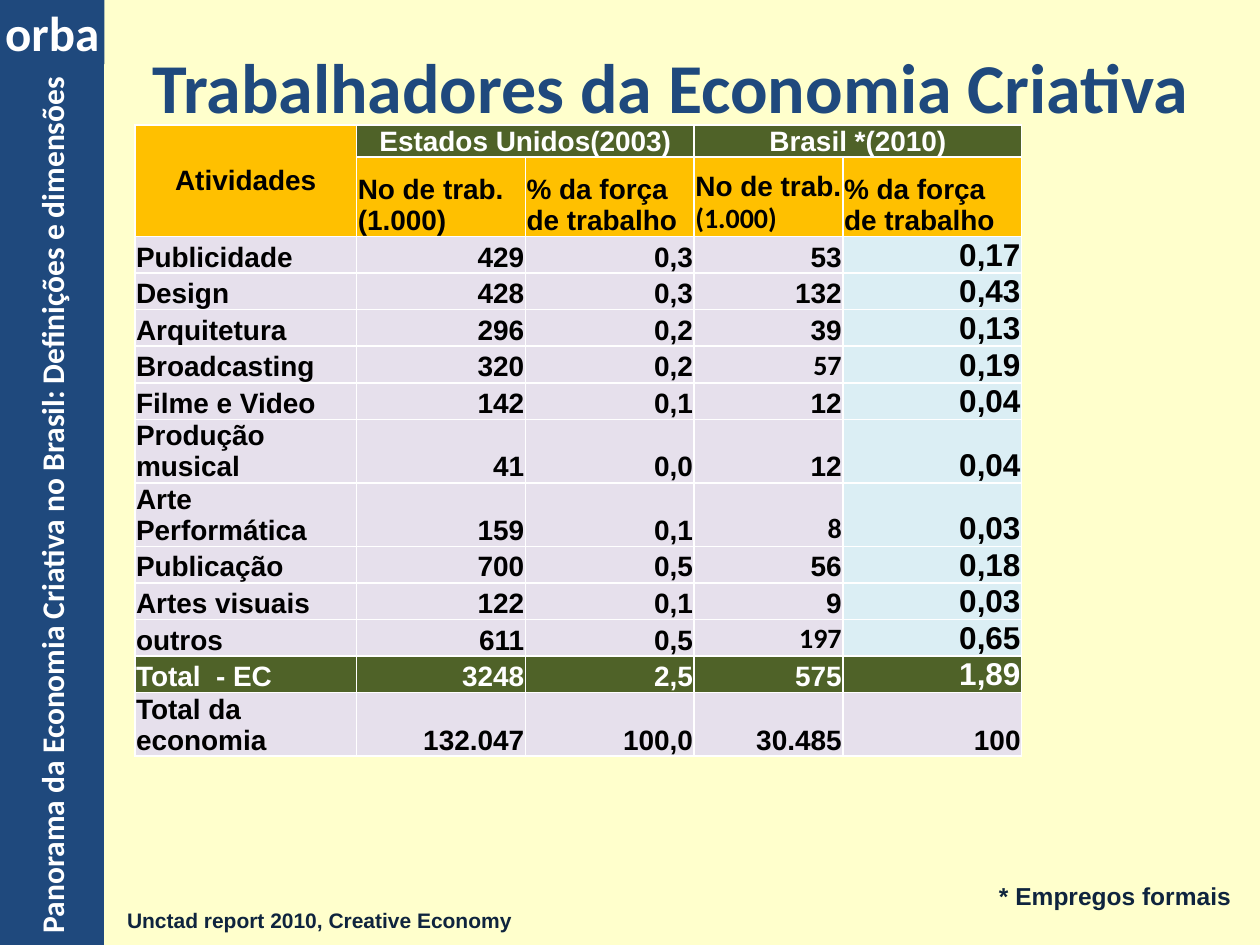
from lxml import etree
from pptx import Presentation
from pptx.dml.color import RGBColor
from pptx.enum.shapes import MSO_SHAPE
from pptx.enum.text import MSO_ANCHOR as ANCHOR, MSO_AUTO_SIZE as AUTO, PP_ALIGN as ALIGN
from pptx.oxml.ns import qn
from pptx.util import Inches, Pt

COLORS = {
    "background": "FFFFCC", "blue": "1F497D", "white": "FFFFFF", "black": "000000",
    "gold": "FFC000", "green": "4F6228", "lilac": "E6E0EC", "aqua": "DBEEF4",
    "navy": "0F243E",
}


def rgb(name):
    return RGBColor.from_string(COLORS[name])


def write(tf, text, size=16, font="Arial", color="black", align=ALIGN.LEFT, new=False):
    p = tf.add_paragraph() if new else tf.paragraphs[0]
    p.alignment = align
    r = p.add_run()
    r.text = text
    r.font.size = Pt(size)
    r.font.name = font
    r.font.bold = True
    r.font.color.rgb = rgb(color)


prs = Presentation()
prs.slide_width, prs.slide_height = Inches(10), Inches(7.5)
s = prs.slides.add_slide(prs.slide_layouts[5])
s.background.fill.solid()
s.background.fill.fore_color.rgb = rgb("background")

bars = [
    ("Panorama da Economia Criativa no Brasil: Definições e dimensões",
     (-3.34, 3.34, 7.5, 0.83), 270, 18, ALIGN.LEFT),
    ("orba", (0, 0, 0.83, 0.51), 0, 28, ALIGN.CENTER),
]
for text, box, rotation, size, align in bars:
    sp = s.shapes.add_shape(MSO_SHAPE.RECTANGLE, *map(Inches, box))
    sp.rotation = rotation
    sp.shadow.inherit = False
    sp.fill.solid()
    sp.fill.fore_color.rgb = rgb("blue")
    sp.line.fill.background()
    tf = sp.text_frame
    tf.word_wrap = rotation != 0
    tf.vertical_anchor = ANCHOR.MIDDLE
    write(tf, text, size=size, font="Calibri", color="white", align=align)

title = s.shapes.title
title.left, title.top = Inches(0.91), Inches(0.13)
title.width, title.height = Inches(8.82), Inches(1.1)
title.text_frame.auto_size = AUTO.NONE
title.text_frame.vertical_anchor = ANCHOR.MIDDLE
write(title.text_frame, "Trabalhadores da Economia Criativa", size=40, font="Calibri",
      color="blue", align=ALIGN.CENTER)

rows = [
    ["Atividades", "Estados Unidos(2003)", "", "Brasil *(2010)", ""],
    ["", "No de trab. (1.000)", "% da força de trabalho", "No de trab.",
     "% da força de trabalho"],
    ["Publicidade", "429", "0,3", "53", "0,17"],
    ["Design", "428", "0,3", "132", "0,43"],
    ["Arquitetura", "296", "0,2", "39", "0,13"],
    ["Broadcasting", "320", "0,2", "57", "0,19"],
    ["Filme e Video", "142", "0,1", "12", "0,04"],
    ["Produção musical", "41", "0,0", "12", "0,04"],
    ["Arte Performática", "159", "0,1", "8", "0,03"],
    ["Publicação", "700", "0,5", "56", "0,18"],
    ["Artes visuais", "122", "0,1", "9", "0,03"],
    ["outros", "611", "0,5", "197", "0,65"],
    ["Total  - EC", "3248", "2,5", "575", "1,89"],
    ["Total da economia", "132.047", "100,0", "30.485", "100"],
]
col_widths = [1.76, 1.34, 1.34, 1.18, 1.42]
row_heights = [0.25, 0.63] + [0.29] * 5 + [0.5] * 2 + [0.29] * 4 + [0.5]
total_row, economy_row = len(rows) - 2, len(rows) - 1
calibri_values = ("57", "8", "197")

table = s.shapes.add_table(len(rows), len(col_widths), Inches(1.07), Inches(0.99),
                           Inches(sum(col_widths)), Inches(sum(row_heights))).table
table.first_row = table.horz_banding = False
for col, width in zip(table.columns, col_widths):
    col.width = Inches(width)
for row, height in zip(table.rows, row_heights):
    row.height = Inches(height)

for i, values in enumerate(rows):
    for j, text in enumerate(values):
        cell = table.cell(i, j)
        cell.margin_left = cell.margin_right = cell.margin_top = Inches(0.01)
        cell.margin_bottom = 0
        cell.vertical_anchor = ANCHOR.MIDDLE if i == j == 0 else ANCHOR.BOTTOM
        for side in ("lnL", "lnR", "lnT", "lnB"):
            ln = etree.SubElement(cell._tc.get_or_add_tcPr(), qn(f"a:{side}"), w=str(Pt(1)))
            fill = etree.SubElement(ln, qn("a:solidFill"))
            etree.SubElement(fill, qn("a:srgbClr"), val=COLORS["white"])

        if i == total_row or (i == 0 and j > 0):
            fill_name = "green"
        elif i < 2:
            fill_name = "gold"
        else:
            fill_name = "aqua" if j == 4 and i != economy_row else "lilac"
        cell.fill.solid()
        cell.fill.fore_color.rgb = rgb(fill_name)

        if i == 0:
            align = ALIGN.CENTER
        else:
            align = ALIGN.RIGHT if i > 1 and j > 0 else ALIGN.LEFT
        if text:
            write(cell.text_frame, text, align=align,
                  size=18 if j == 4 and 1 < i < economy_row else 16,
                  font="Calibri" if text in calibri_values else "Arial",
                  color="white" if fill_name == "green" else "black")

write(table.cell(1, 3).text_frame, "(1.000)", font="Calibri", new=True)
table.cell(0, 0).merge(table.cell(1, 0))
for j in (1, 3):
    table.cell(0, j).merge(table.cell(0, j + 1))

notes = [
    ("Unctad report 2010, Creative Economy", (0.91, 7.15, 3.28, 0.3), 12),
    ("* Empregos formais", (7.83, 6.94, 2.05, 0.34), 14),
]
for text, box, size in notes:
    tf = s.shapes.add_textbox(*map(Inches, box)).text_frame
    tf.word_wrap = False
    tf.auto_size = AUTO.SHAPE_TO_FIT_TEXT
    write(tf, text, size=size, color="navy")

prs.save("out.pptx")
